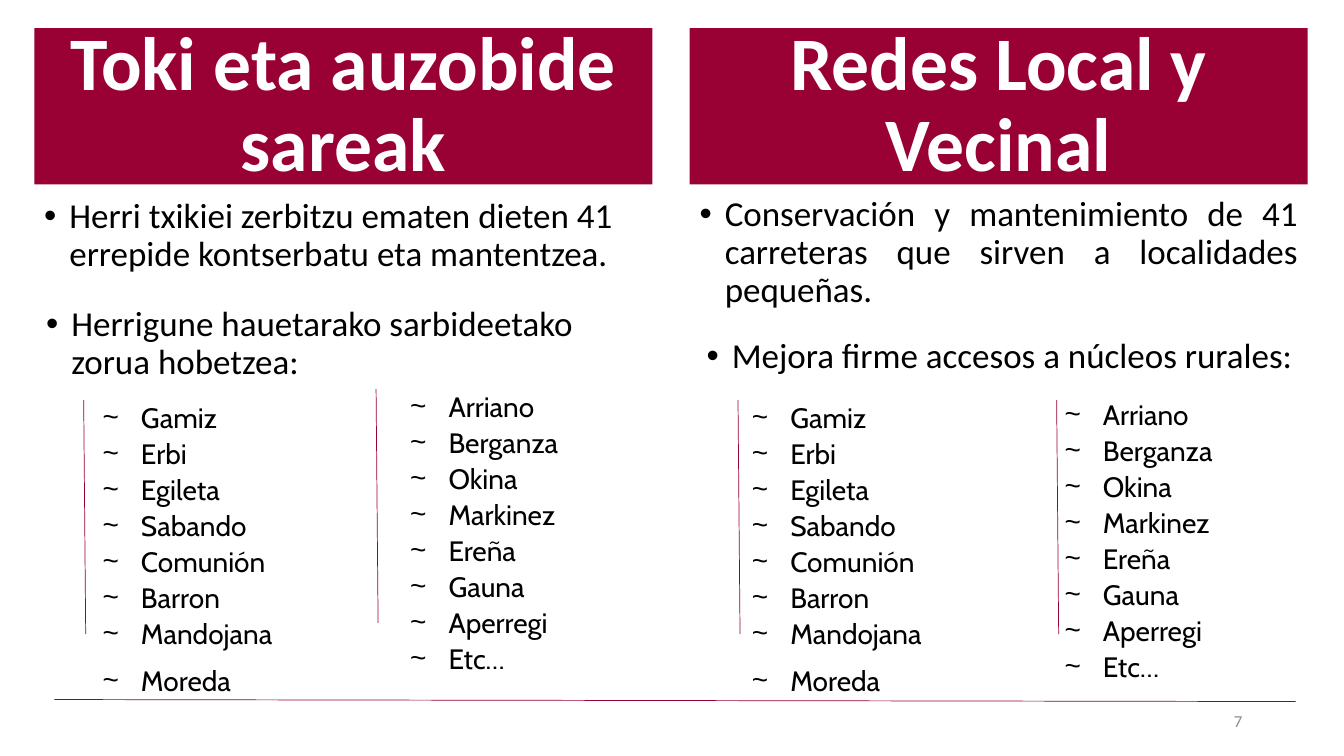
from lxml import etree
from pptx import Presentation
from pptx.dml.color import RGBColor
from pptx.enum.shapes import MSO_CONNECTOR, MSO_SHAPE
from pptx.enum.text import MSO_ANCHOR, MSO_AUTO_SIZE, PP_ALIGN
from pptx.oxml.ns import qn
from pptx.util import Inches, Pt

LEFT, CENTER, RIGHT, JUSTIFY = (
    PP_ALIGN.LEFT, PP_ALIGN.CENTER, PP_ALIGN.RIGHT, PP_ALIGN.JUSTIFY)
TOP, MIDDLE = MSO_ANCHOR.TOP, MSO_ANCHOR.MIDDLE
RECT, STRAIGHT = MSO_SHAPE.RECTANGLE, MSO_CONNECTOR.STRAIGHT
GROW = MSO_AUTO_SIZE.SHAPE_TO_FIT_TEXT

MAROON, WHITE, BLACK, GREY = "990033", "FFFFFF", "000000", "8C8C8C"
COLUMN_W = 6.13

FIRST_TOWNS = ["Gamiz", "Erbi", "Egileta", "Sabando", "Comunión", "Barron",
               "Mandojana", "Moreda"]
LAST_TOWNS = ["Arriano", "Berganza", "Okina", "Markinez", "Ereña", "Gauna",
              "Aperregi", "Etc…"]


def rgb(value):
    return RGBColor.from_string(value)


def set_attrs(obj, values):
    for name, value in values.items():
        setattr(obj, name, value)


def set_bullet(p, char, indent):
    pPr = p._p.get_or_add_pPr()
    pPr.set("marL", str(Inches(indent)))
    pPr.set("indent", str(-Inches(indent)))
    etree.SubElement(pPr, qn("a:buFont")).set("typeface", "Arial")
    etree.SubElement(pPr, qn("a:buChar")).set("char", char)


def write(p, text, font, color, para):
    set_attrs(p, para)
    r = p.add_run()
    r.text = text
    set_attrs(r.font, font)
    r.font.color.rgb = rgb(color)


def add_text_box(s, left, top, width, height, anchor=TOP):
    tf = s.shapes.add_textbox(
        Inches(left), Inches(top), Inches(width), Inches(height)).text_frame
    set_attrs(tf, {"word_wrap": True, "vertical_anchor": anchor})
    return tf


def add_banner(s, left, text):
    sp = s.shapes.add_shape(
        RECT, Inches(left), Inches(0.28), Inches(COLUMN_W), Inches(1.55))
    sp.shadow.inherit = False
    sp.fill.solid()
    sp.fill.fore_color.rgb = rgb(MAROON)
    sp.line.fill.background()
    tf = sp.text_frame
    set_attrs(tf, {"word_wrap": True, "vertical_anchor": MIDDLE})
    write(tf.paragraphs[0], text,
          {"name": "Calibri", "size": Pt(54), "bold": True}, WHITE,
          {"alignment": CENTER, "line_spacing": 0.9})


def add_point(s, left, top, height, text, align):
    p = add_text_box(s, left, top, COLUMN_W, height).paragraphs[0]
    write(p, text, {"name": "Calibri", "size": Pt(25)}, BLACK,
          {"alignment": align, "line_spacing": 0.9, "space_before": Pt(10)})
    set_bullet(p, "•", 0.25)


def add_towns(s, left, top, width, height, towns, spaced):
    """List the towns, with space after the last `spaced` of them."""
    tf = add_text_box(s, left, top, width, height)
    tf.auto_size = GROW
    for i, town in enumerate(towns):
        p = tf.paragraphs[0] if i == 0 else tf.add_paragraph()
        after = 8 if i >= len(towns) - spaced else 0
        write(p, town, {"name": "Cabin", "size": Pt(20)}, BLACK,
              {"alignment": JUSTIFY, "line_spacing": 1.07,
               "space_after": Pt(after)})
        set_bullet(p, "~", 0.38)


def add_rule(s, x, y, dx, dy):
    line = s.shapes.add_connector(
        STRAIGHT, Inches(x), Inches(y), Inches(x + dx), Inches(y + dy))
    line.line.color.rgb = rgb(MAROON)
    line.line.width = Pt(0.5)
    etree.SubElement(line._element.spPr, qn("a:effectLst"))


def main():
    prs = Presentation()
    prs.slide_width, prs.slide_height = Inches(13.33), Inches(7.5)
    s = prs.slides.add_slide(prs.slide_layouts[6])

    # Headings
    add_banner(s, 0.34, "Toki eta auzobide sareak")
    add_banner(s, 6.84, "Redes Local y Vecinal")

    # Main points in Basque and Spanish
    for point in (
        (0.34, 1.92, 0.78, "Herri txikiei zerbitzu ematen dieten 41 errepide "
         "kontserbatu eta mantentzea.", LEFT),
        (0.36, 2.99, 0.78,
         "Herrigune hauetarako sarbideetako zorua hobetzea:", LEFT),
        (6.84, 1.9, 1.22, "Conservación y mantenimiento de 41 carreteras que "
         "sirven a localidades pequeñas.", JUSTIFY),
        (6.91, 3.31, 0.41, "Mejora firme accesos a núcleos rurales:", JUSTIFY),
    ):
        add_point(s, *point)

    # Town lists
    for left in (0.92, 7.36):
        add_towns(s, left, 3.9, 3.11, 4.02, FIRST_TOWNS, 2)
    for left, top in ((3.97, 3.79), (10.46, 3.87)):
        add_towns(s, left, top, 2.59, 3.43, LAST_TOWNS, 1)

    # Rules beside the lists and above the footer
    for x, y in ((0.83, 3.97), (3.73, 3.86), (7.32, 3.97), (10.48, 3.97)):
        add_rule(s, x, y, 0.02, 2.32)
    add_rule(s, 0.54, 6.94, 12.31, 0.02)

    # Page number
    tf = add_text_box(s, 9.42, 6.95, 3, 0.4, MIDDLE)
    write(tf.paragraphs[0], "7", {"name": "Calibri", "size": Pt(12)}, GREY,
          {"alignment": RIGHT})

    prs.save("out.pptx")


if __name__ == "__main__":
    main()
